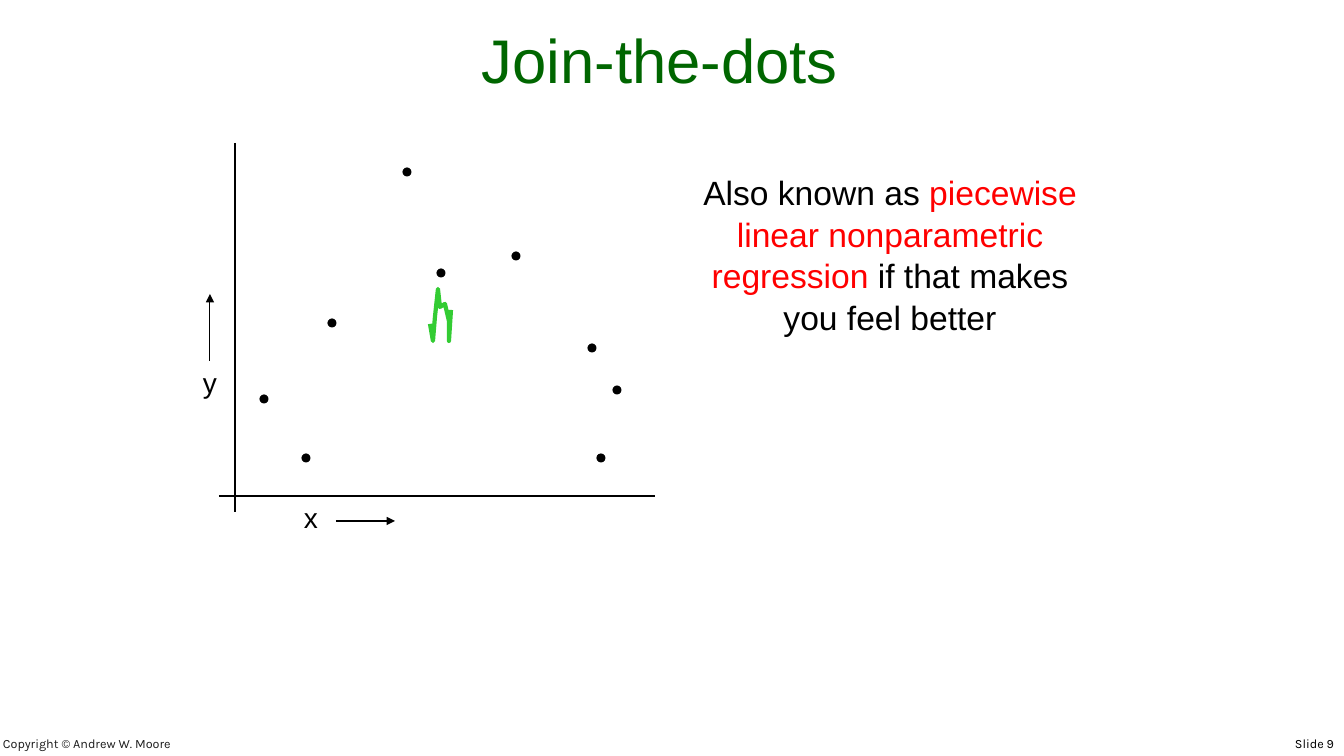
from lxml import etree
from pptx import Presentation
from pptx.dml.color import RGBColor
from pptx.enum.shapes import MSO_CONNECTOR, MSO_SHAPE
from pptx.enum.text import MSO_ANCHOR, PP_ALIGN
from pptx.oxml.ns import qn
from pptx.util import Emu, Pt

STRAIGHT, OVAL = MSO_CONNECTOR.STRAIGHT, MSO_SHAPE.OVAL
LEFT, CENTER, RIGHT = PP_ALIGN.LEFT, PP_ALIGN.CENTER, PP_ALIGN.RIGHT
TOP, BOTTOM = MSO_ANCHOR.TOP, MSO_ANCHOR.BOTTOM
PX = 914400 / 100.8

COLORS = {"black": "000000", "footer": "1C1C1C", "title": "006600",
          "term": "FF0000", "scribble": "33CC33"}

TITLE = "Join-the-dots"
COPYRIGHT = "Copyright © Andrew W. Moore"
SLIDE_NUMBER = "Slide 9"
REMARK = [("Also known as ", "black"),
          ("piecewise linear nonparametric regression", "term"),
          (" if that makes you feel better", "black")]

# Start and end of each line, in px
AXES = [((235, 143), (235, 512)), ((219, 496), (655, 496))]
AXIS_ARROWS = [((336, 521), (395, 521)), ((210, 361), (210, 294))]
AXIS_LABELS = [("x", (294, 496, 33, 43)), ("y", (193, 361, 33, 43))]

DOT_SIZE = 8
DOT_CENTERS = [(264, 399), (306, 458), (332, 323), (407, 172), (441, 273),
               (516, 256), (601, 458), (617, 390), (592, 348)]
SCRIBBLE = [(430, 324), (433, 341), (435, 317), (438, 289), (440, 307),
            (445, 304), (449, 321), (449, 341), (451, 310)]


def px(*lengths):
    return [Emu(round(length * PX)) for length in lengths]


def rgb(name):
    return RGBColor.from_string(COLORS[name])


def add_text(slide, runs, box, size, font="Arial", color="black",
             align=LEFT, anchor=TOP, spacing=None):
    """Write a string, or a list of (text, color name) runs, in a text box."""
    frame = slide.shapes.add_textbox(*px(*box)).text_frame
    frame.word_wrap = True
    frame.vertical_anchor = anchor
    paragraph = frame.paragraphs[0]
    paragraph.alignment = align
    paragraph.line_spacing = spacing
    for text, run_color in [(runs, color)] if isinstance(runs, str) else runs:
        run = paragraph.add_run()
        run.text = text
        run.font.name = font
        run.font.size = Pt(size)
        run.font.color.rgb = rgb(run_color)


def add_line(slide, start, end, width, arrow=False):
    line = slide.shapes.add_connector(STRAIGHT, *px(*start, *end))
    line.line.color.rgb = rgb("black")
    line.line.width = Pt(width)
    if arrow:
        etree.SubElement(line.line._get_or_add_ln(), qn("a:tailEnd"), type="triangle")
    etree.SubElement(line._element.spPr, qn("a:effectLst"))


def add_dot(slide, x, y):
    corner = (x - DOT_SIZE / 2, y - DOT_SIZE / 2)
    dot = slide.shapes.add_shape(OVAL, *px(*corner, DOT_SIZE, DOT_SIZE))
    dot.shadow.inherit = False
    dot.fill.solid()
    dot.fill.fore_color.rgb = rgb("black")
    dot.line.color.rgb = rgb("black")
    dot.line.width = Pt(0.75)


def add_scribble(slide):
    builder = slide.shapes.build_freeform(*SCRIBBLE[0], scale=PX)
    builder.add_line_segments(SCRIBBLE[1:], close=False)
    scribble = builder.convert_to_shape()
    scribble.shadow.inherit = False
    scribble.fill.background()
    scribble.line.color.rgb = rgb("scribble")
    scribble.line.width = Pt(3)


def main():
    deck = Presentation()
    deck.slide_width, deck.slide_height = px(1344, 756)
    slide = deck.slides.add_slide(deck.slide_layouts[6])

    add_text(slide, COPYRIGHT, (-7, 728, 746, 28), 9, font="Karla",
             color="footer", anchor=BOTTOM)
    add_text(slide, SLIDE_NUMBER, (818, 731, 526, 25), 9, font="Karla", align=RIGHT)
    add_text(slide, TITLE, (33, 17, 1254, 84), 44, color="title",
             align=CENTER, anchor=BOTTOM)

    for start, end in AXES:
        add_line(slide, start, end, 1.5)
    for center in DOT_CENTERS:
        add_dot(slide, *center)
    for label, box in AXIS_LABELS:
        add_text(slide, label, box, 20)
    for start, end in AXIS_ARROWS:
        add_line(slide, start, end, 0.75, arrow=True)
    add_scribble(slide)

    add_text(slide, REMARK, (674, 165, 432, 173), 24, align=CENTER, spacing=1.04)
    deck.save("out.pptx")


if __name__ == "__main__":
    main()
